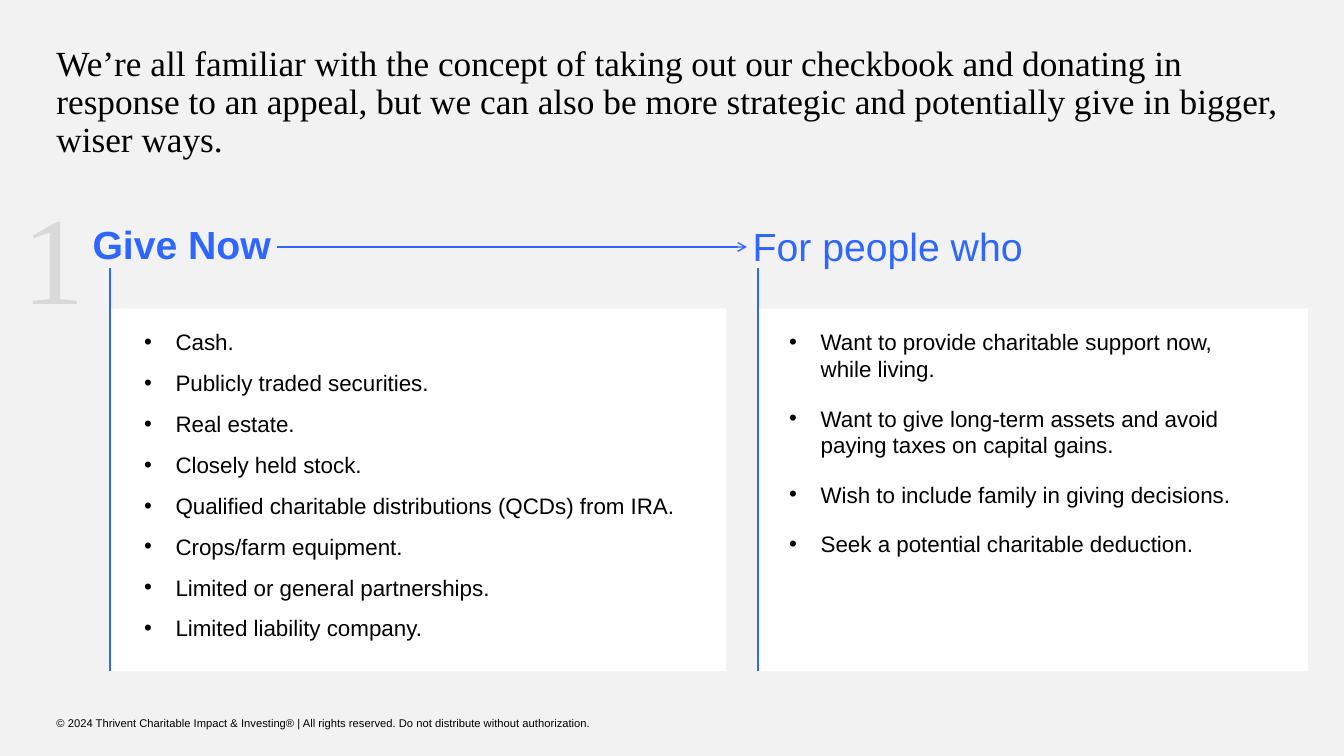
from lxml.etree import SubElement
from pptx import Presentation
from pptx.dml.color import RGBColor
from pptx.enum.shapes import MSO_CONNECTOR, MSO_SHAPE
from pptx.enum.text import MSO_ANCHOR
from pptx.oxml.ns import qn
from pptx.util import Pt

THEME = {
    "page": "F2F2F2", "card": "FFFFFF", "ink": "000000",
    "blue": "2E66FF", "pale": "D9D9D9",
    "sans": "Arial", "serif": "Times New Roman",
    "title": 25.2, "head": 28, "body": 16, "foot": 8, "digit": 89,
}
TITLE = ("We’re all familiar with the concept of taking out our checkbook and "
         "donating in response to an appeal, but we can also be more strategic "
         "and potentially give in bigger, wiser ways.")
FOOTER = ("© 2024 Thrivent Charitable Impact & Investing® | All rights reserved. "
          "Do not distribute without authorization.")
STEP = "1"
GIFTS = [
    "Cash.",
    "Publicly traded securities.",
    "Real estate.",
    "Closely held stock.",
    "Qualified charitable distributions (QCDs) from IRA.",
    "Crops/farm equipment.",
    "Limited or general partnerships.",
    "Limited liability company.",
]
DONORS = [
    "Want to provide charitable support now, while living.",
    "Want to give long-term assets and avoid paying taxes on capital gains.",
    "Wish to include family in giving decisions.",
    "Seek a potential charitable deduction.",
]
COLUMNS = [
    {"left": 78.5, "width": 440, "list": (95.8, 410.4, 233.3), "items": GIFTS, "before": 0,
     "head": "Give Now", "box": (59, 157.7, 171.4, 28.8), "bold": True, "lead": 0.9},
    {"left": 541.5, "width": 393, "list": (556.6, 339, 172), "items": DONORS, "before": 6,
     "head": "For people who", "box": (530.6, 155.5, 318.2, 41), "bold": False, "lead": 1},
]
RULE, TOP, BOTTOM = 191.5, 220.3, 479.5
LIST = 231.1
ARROW = (198, 176.4, 533.5, 176.4)
INDENT, AFTER = 22.5, 10


def color(name):
    return RGBColor.from_string(THEME[name])


def write(box, lines, size, tint="ink", face="sans", bold=False, lead=1,
          inset=True, bullet=False, before=0, after=0, anchor=MSO_ANCHOR.TOP):
    frame = slide.shapes.add_textbox(*map(Pt, box)).text_frame
    frame.word_wrap = True
    frame.vertical_anchor = anchor
    if not inset:
        frame.margin_left = frame.margin_right = 0
        frame.margin_top = frame.margin_bottom = 0
    frame.text = "\n".join(lines)
    for i, para in enumerate(frame.paragraphs):
        para.line_spacing = lead
        para.space_before = Pt(before if i else 0)
        para.space_after = Pt(after)
        if bullet:
            props = para._p.get_or_add_pPr()
            props.set("marL", str(Pt(INDENT)))
            props.set("indent", str(-Pt(INDENT)))
            SubElement(props, qn("a:buFont"), typeface=THEME["sans"])
            SubElement(props, qn("a:buChar"), char="•")
        for run in para.runs:
            run.font.name = THEME[face]
            run.font.size = Pt(THEME[size])
            run.font.bold = bold
            run.font.color.rgb = color(tint)


def rule(ends, arrow=False):
    line = slide.shapes.add_connector(MSO_CONNECTOR.STRAIGHT, *map(Pt, ends))
    line.line.color.rgb = color("blue")
    line.line.width = Pt(1)
    if arrow:
        SubElement(line.line._get_or_add_ln(), qn("a:tailEnd"), type="arrow")
    SubElement(line._element.spPr, qn("a:effectLst"))


def card(left, width):
    shape = slide.shapes.add_shape(
        MSO_SHAPE.RECTANGLE, Pt(left), Pt(TOP), Pt(width), Pt(BOTTOM - TOP))
    shape.shadow.inherit = False
    shape.fill.solid()
    shape.fill.fore_color.rgb = color("card")
    shape.line.fill.background()


deck = Presentation()
deck.slide_width, deck.slide_height = Pt(960), Pt(540)
slide = deck.slides.add_slide(deck.slide_layouts[6])
slide.background.fill.solid()
slide.background.fill.fore_color.rgb = color("page")

write((40.3, 33.1, 880, 67), [TITLE], "title", face="serif", lead=0.9, inset=False)
write((40.3, 510.5, 440, 11.5), [FOOTER], "foot", inset=False, anchor=MSO_ANCHOR.MIDDLE)
write((16, 128.5, 48, 102), [STEP], "digit", "pale", "serif", inset=False)

for col in COLUMNS:
    left = col["left"]
    card(left, col["width"])
    write(col["box"], [col["head"]], "head", "blue", bold=col["bold"], lead=col["lead"])
    start, width, height = col["list"]
    write((start, LIST, width, height), col["items"], "body",
          bullet=True, before=col["before"], after=AFTER)
    rule((left, RULE, left, BOTTOM))
rule(ARROW, arrow=True)

deck.save("out.pptx")
